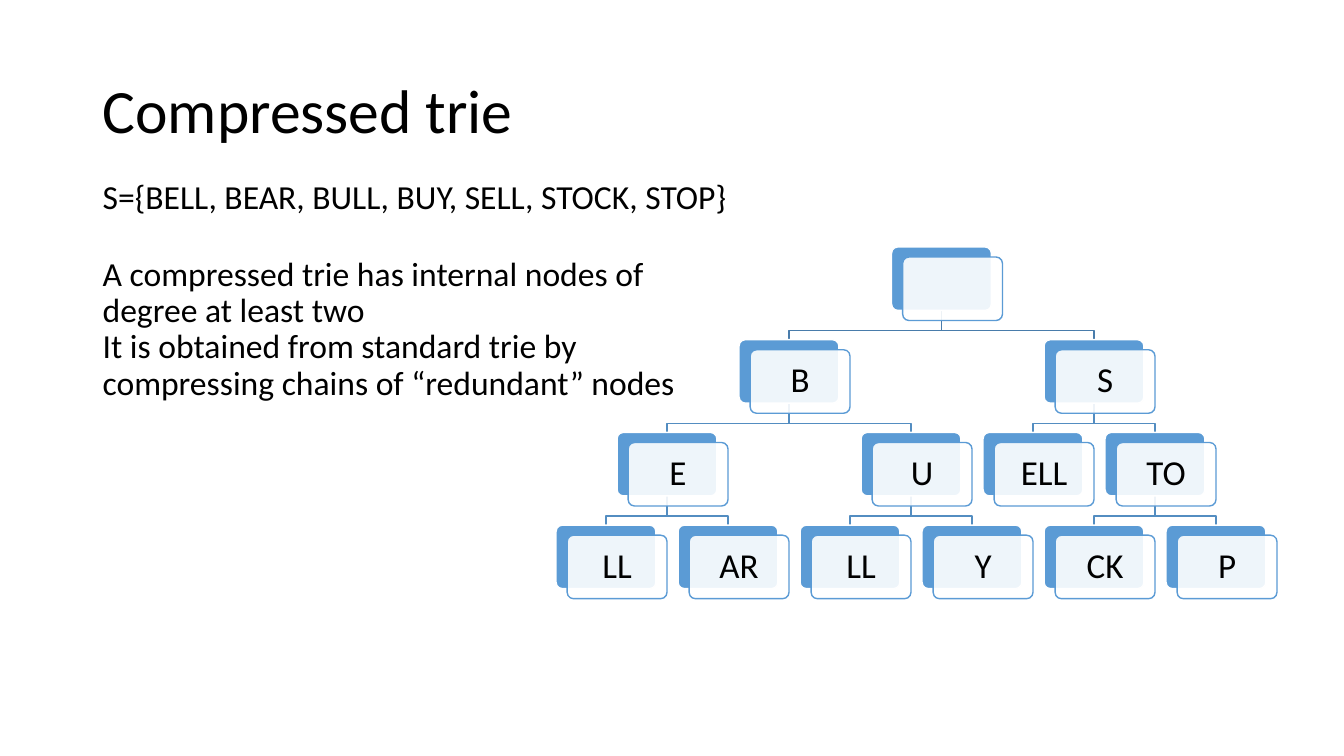
from pptx import Presentation
from pptx.dml.color import RGBColor
from pptx.enum.shapes import MSO_SHAPE
from pptx.enum.text import MSO_ANCHOR, PP_ALIGN
from pptx.oxml.ns import qn
from pptx.util import Inches, Pt
from lxml import etree

TITLE = "Compressed trie"
BODY = [
    # text, line spacing, space before in points
    ("S={BELL, BEAR, BULL, BUY, SELL, STOCK, STOP}", 1.0, 0),
    ("A compressed trie has internal nodes of degree at least two", 0.9, 29),
    ("It is obtained from standard trie by compressing chains of “redundant” nodes", 0.9, 0),
]
# A node is (label, children); a leaf is (label, column)
TRIE = ("", [
    ("B", [
        ("E", [("LL", 0), ("AR", 1)]),
        ("U", [("LL", 2), ("Y", 3)]),
    ]),
    ("S", [
        ("ELL", 3.5),
        ("TO", [("CK", 4), ("P", 5)]),
    ]),
])
COLORS = {"text": "000000", "card": "5B9BD5", "white": "FFFFFF",
          "root_edge": "497CAB", "edge": "538DC1"}
FONT = "Calibri"
FIRST_X, COLUMN_STEP = 6.01, 1.21
ROOT_Y, LEVEL_STEP = 2.45, 0.92
CARD_W, CARD_H = 0.99, 0.63
FRONT_DX, FRONT_DY = 0.11, 0.1
EDGE_DROP = 0.2

prs = Presentation()
prs.slide_width, prs.slide_height = Inches(13.33), Inches(7.5)
s = prs.slides.add_slide(prs.slide_layouts[6])


def color(name):
    return RGBColor.from_string(COLORS[name])


def write(p, text, size, spacing):
    p.text = text
    p.line_spacing = spacing
    for r in p.runs:
        r.font.name, r.font.size = FONT, Pt(size)
        r.font.color.rgb = color("text")


def add_text_box(x, y, w, h, anchor):
    tf = s.shapes.add_textbox(Inches(x), Inches(y), Inches(w), Inches(h)).text_frame
    tf.word_wrap = True
    tf.vertical_anchor = anchor
    return tf


def place(node, depth=0):
    """Return (nodes, edges) of a subtree, parent first, in inches."""
    label, below = node
    y = ROOT_Y + depth * LEVEL_STEP
    if not isinstance(below, list):
        return [(label, FIRST_X + below * COLUMN_STEP, y)], []
    parts = [place(child, depth + 1) for child in below]
    child_xs = [nodes[0][1] for nodes, _ in parts]
    x = sum(child_xs) / len(child_xs)
    line = "edge" if depth else "root_edge"
    nodes = [(label, x, y)]
    edges = [(x, child_x, y + CARD_H, line) for child_x in child_xs]
    for sub_nodes, sub_edges in parts:
        nodes += sub_nodes
        edges += sub_edges
    return nodes, edges


def add_edge(x, child_x, top, line):
    bend, bottom = top + EDGE_DROP, top + LEVEL_STEP - CARD_H
    fb = s.shapes.build_freeform(Inches(x), Inches(top))
    fb.add_line_segments([(Inches(a), Inches(b)) for a, b in
                          ((x, bend), (child_x, bend), (child_x, bottom))], close=False)
    sp = fb.convert_to_shape()
    sp.shadow.inherit = False
    sp.fill.background()
    sp.line.color.rgb = color(line)
    sp.line.width = Pt(1)


def add_card(x, y, fill, line):
    sp = s.shapes.add_shape(MSO_SHAPE.ROUNDED_RECTANGLE, Inches(x), Inches(y),
                            Inches(CARD_W), Inches(CARD_H))
    sp.adjustments[0] = 0.1
    sp.shadow.inherit = False
    sp.fill.solid()
    sp.fill.fore_color.rgb = color(fill)
    sp.line.color.rgb = color(line)
    sp.line.width = Pt(1)
    return sp


def add_node(label, x, y):
    left = x - CARD_W / 2
    add_card(left, y, "card", "white")
    front = add_card(left + FRONT_DX, y + FRONT_DY, "white", "card")
    fill = front.fill._xPr.find(qn("a:solidFill"))
    etree.SubElement(fill[0], qn("a:alpha"), val="90000")
    if label:
        tf = front.text_frame
        tf.margin_left = tf.margin_right = tf.margin_top = tf.margin_bottom = Inches(0.1)
        tf.vertical_anchor = MSO_ANCHOR.MIDDLE
        p = tf.paragraphs[0]
        write(p, label, 25, 0.9)
        p.alignment = PP_ALIGN.CENTER


title = add_text_box(0.92, 0.4, 11.5, 1.45, MSO_ANCHOR.MIDDLE)
write(title.paragraphs[0], TITLE, 44, 0.9)

trie_nodes, trie_edges = place(TRIE)
for edge in trie_edges:
    add_edge(*edge)
for trie_node in trie_nodes:
    add_node(*trie_node)

body = add_text_box(0.92, 1.7, 6.54, 2.36, MSO_ANCHOR.TOP)
for i, (text, spacing, before) in enumerate(BODY):
    p = body.add_paragraph() if i else body.paragraphs[0]
    write(p, text, 24, spacing)
    if before:
        p.space_before = Pt(before)

prs.save("out.pptx")
